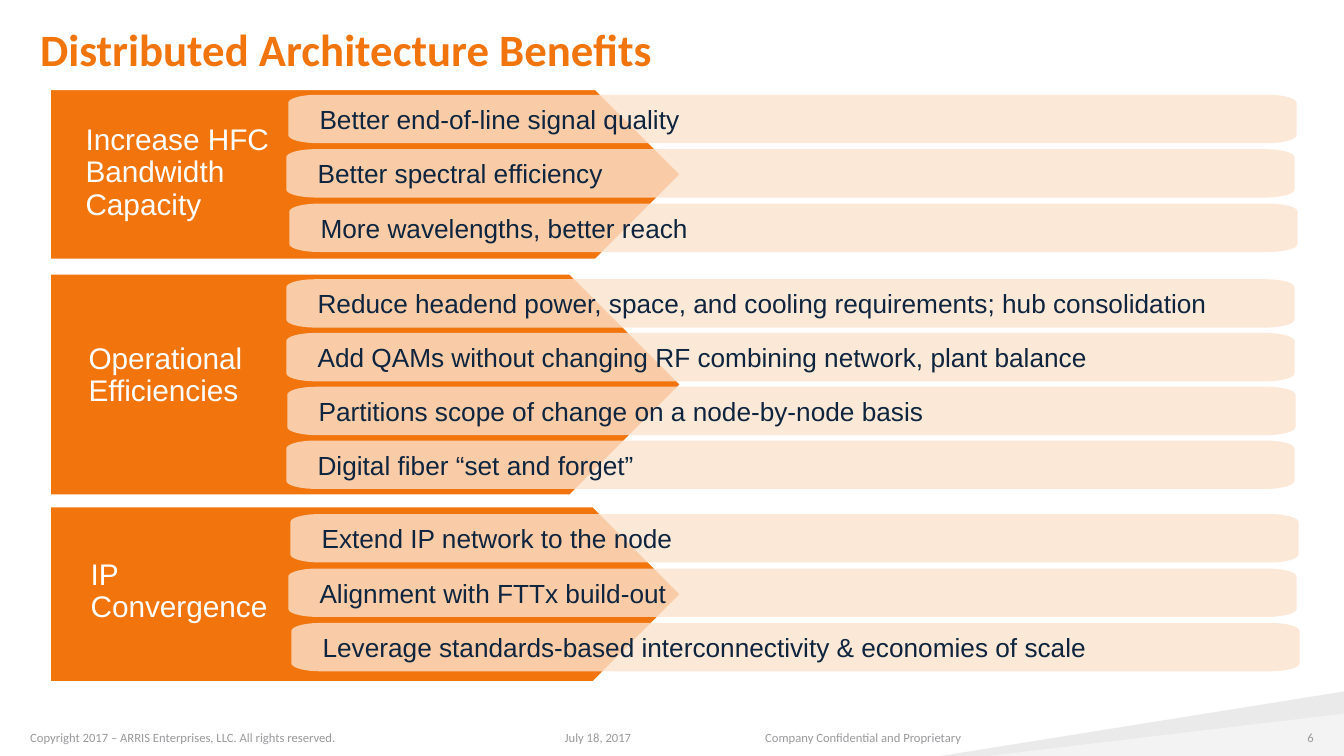
from math import cos, pi, sin

from lxml.etree import SubElement
from pptx import Presentation
from pptx.dml.color import RGBColor
from pptx.enum.shapes import MSO_SHAPE
from pptx.enum.text import MSO_ANCHOR, PP_ALIGN
from pptx.oxml.ns import qn
from pptx.util import Inches, Pt

ORANGE = "F1740D"
WHITE = "FFFFFF"
BAR_WIDTH, BAR_HEIGHT = 10, 0.48
CORNER_WIDTH, CORNER_HEIGHT, CORNER_STEPS = 0.29, 0.08, 10

TITLE_FORMAT = {"name": "Calibri", "size": Pt(32), "bold": True}
HEADING_FORMAT = {"name": "Arial", "size": Pt(21.3)}
BAR_FORMAT = {"name": "Arial", "size": Pt(18.7)}
FOOTER_FORMAT = {"name": "Calibri", "size": Pt(9)}

BENEFITS = [
    {
        "heading": "Increase HFC Bandwidth Capacity",
        "heading_box": (0.75, 1.19, 2.13, 1.07),
        "arrow": (0.88, 1.7),
        "first_bar": 0.94,
        "pitch": 0.54,
        "bars": [
            (2.86, "Better end-of-line signal quality"),
            (2.84, "Better spectral efficiency"),
            (2.87, "More wavelengths, better reach"),
        ],
    },
    {
        "heading": "Operational Efficiencies",
        "heading_box": (0.78, 3.36, 2.13, 0.75),
        "arrow": (2.71, 2.21),
        "first_bar": 2.77,
        "pitch": 1.6 / 3,
        "bars": [
            (2.84, "Reduce headend power, space, and cooling requirements; hub consolidation"),
            (2.84, "Add QAMs without changing RF combining network, plant balance"),
            (2.85, "Partitions scope of change on a node-by-node basis"),
            (2.84, "Digital fiber “set and forget”"),
        ],
    },
    {
        "heading": "IP Convergence",
        "heading_box": (0.8, 5.5, 2.13, 0.75),
        "arrow": (5.02, 1.75),
        "first_bar": 5.1,
        "pitch": 0.54,
        "bars": [
            (2.88, "Extend IP network to the node"),
            (2.86, "Alignment with FTTx build-out"),
            (2.89, "Leverage standards-based interconnectivity & economies of scale"),
        ],
    },
]

FOOTERS = [
    ((0.3, 7.19, 4.17, 0.2), "Copyright 2017 – ARRIS Enterprises, LLC. All rights reserved.", PP_ALIGN.LEFT),
    ((4.33, 7.19, 3.2, 0.2), "July 18, 2017", PP_ALIGN.CENTER),
    ((7.59, 7.19, 4.86, 0.2), "Company Confidential and Proprietary", PP_ALIGN.LEFT),
    ((12.44, 7.19, 0.59, 0.2), "6", PP_ALIGN.RIGHT),
]


def color(value):
    """Return the colour for a hex string."""
    return RGBColor.from_string(value)


def set_fill(shape, fill, opacity=100):
    """Fill a shape with a flat colour, without line or shadow."""
    shape.shadow.inherit = False
    shape.fill.solid()
    shape.fill.fore_color.rgb = color(fill)
    shape.line.fill.background()
    if opacity < 100:
        color_element = shape._element.spPr.find(qn("a:solidFill")).find(qn("a:srgbClr"))
        SubElement(color_element, qn("a:alpha"), val=str(opacity * 1000))


def write_text(shape, text, text_format, text_color, insets, anchor=MSO_ANCHOR.TOP,
               alignment=PP_ALIGN.LEFT, line_spacing=1.0):
    """Write one formatted paragraph into a shape."""
    frame = shape.text_frame
    frame.word_wrap = True
    frame.vertical_anchor = anchor
    horizontal, vertical = insets
    frame.margin_left = frame.margin_right = Inches(horizontal)
    frame.margin_top = frame.margin_bottom = Inches(vertical)
    paragraph = frame.paragraphs[0]
    paragraph.alignment = alignment
    paragraph.line_spacing = line_spacing
    run = paragraph.add_run()
    run.text = text
    for name, value in text_format.items():
        setattr(run.font, name, value)
    run.font.color.rgb = color(text_color)


def add_text(slide, box, *text_settings, **text_options):
    """Add a text box at the given place in inches."""
    shape = slide.shapes.add_textbox(*map(Inches, box))
    write_text(shape, *text_settings, **text_options)


def add_outline(slide, points, fill, opacity=100):
    """Add a closed, filled outline through points in inches."""
    corners = [(Inches(x), Inches(y)) for x, y in points]
    builder = slide.shapes.build_freeform(*corners[0])
    builder.add_line_segments(corners[1:], close=True)
    shape = builder.convert_to_shape()
    set_fill(shape, fill, opacity)
    return shape


def add_arrow(slide, top, height):
    """Add the orange pentagon behind a group of benefits."""
    box = map(Inches, (0.49, top, 6.27, height))
    arrow = slide.shapes.add_shape(MSO_SHAPE.PENTAGON, *box)
    set_fill(arrow, ORANGE)
    arrow.line.color.rgb = color(WHITE)
    arrow.line.width = Pt(2)


def bar_points(left, top):
    """Return the outline of a bar with elliptical corners."""
    right, bottom = left + BAR_WIDTH, top + BAR_HEIGHT
    centers = [
        (right - CORNER_WIDTH, bottom - CORNER_HEIGHT),
        (left + CORNER_WIDTH, bottom - CORNER_HEIGHT),
        (left + CORNER_WIDTH, top + CORNER_HEIGHT),
        (right - CORNER_WIDTH, top + CORNER_HEIGHT),
    ]
    points = []
    for quarter, (x, y) in enumerate(centers):
        for step in range(CORNER_STEPS + 1):
            angle = (quarter + step / CORNER_STEPS) * pi / 2
            points.append((x + CORNER_WIDTH * cos(angle), y + CORNER_HEIGHT * sin(angle)))
    return points


def add_bar(slide, left, top, text):
    """Add one translucent benefit bar."""
    bar = add_outline(slide, bar_points(left, top), "FCE3CE", opacity=80)
    write_text(bar, text, BAR_FORMAT, "0F243E", (0.31, 0), anchor=MSO_ANCHOR.MIDDLE)


def add_benefit_group(slide, group):
    """Add an arrow with its heading and benefit bars."""
    add_arrow(slide, *group["arrow"])
    add_text(slide, group["heading_box"], group["heading"], HEADING_FORMAT, WHITE,
             (0.1, 0.05), line_spacing=0.9)
    for row, (left, text) in enumerate(group["bars"]):
        add_bar(slide, left, group["first_bar"] + row * group["pitch"], text)


def main():
    """Build and save the slide."""
    presentation = Presentation()
    presentation.slide_width = Inches(13.33)
    presentation.slide_height = Inches(7.5)
    slide = presentation.slides.add_slide(presentation.slide_layouts[6])
    add_outline(slide, [(13.33, 6.86), (13.33, 7.5), (9.33, 7.5)], "EAEAEA")
    add_outline(slide, [(13.33, 7.08), (13.33, 7.5), (9.8, 7.5)], "F3F3F3")
    add_text(slide, (0.3, 0.3, 9.83, 1), "Distributed Architecture Benefits",
             TITLE_FORMAT, ORANGE, (0.1, 0), line_spacing=0.85)
    for group in BENEFITS:
        add_benefit_group(slide, group)
    for box, text, alignment in FOOTERS:
        add_text(slide, box, text, FOOTER_FORMAT, "9A9A9D", (0, 0),
                 anchor=MSO_ANCHOR.BOTTOM, alignment=alignment)
    presentation.save("out.pptx")


if __name__ == "__main__":
    main()
